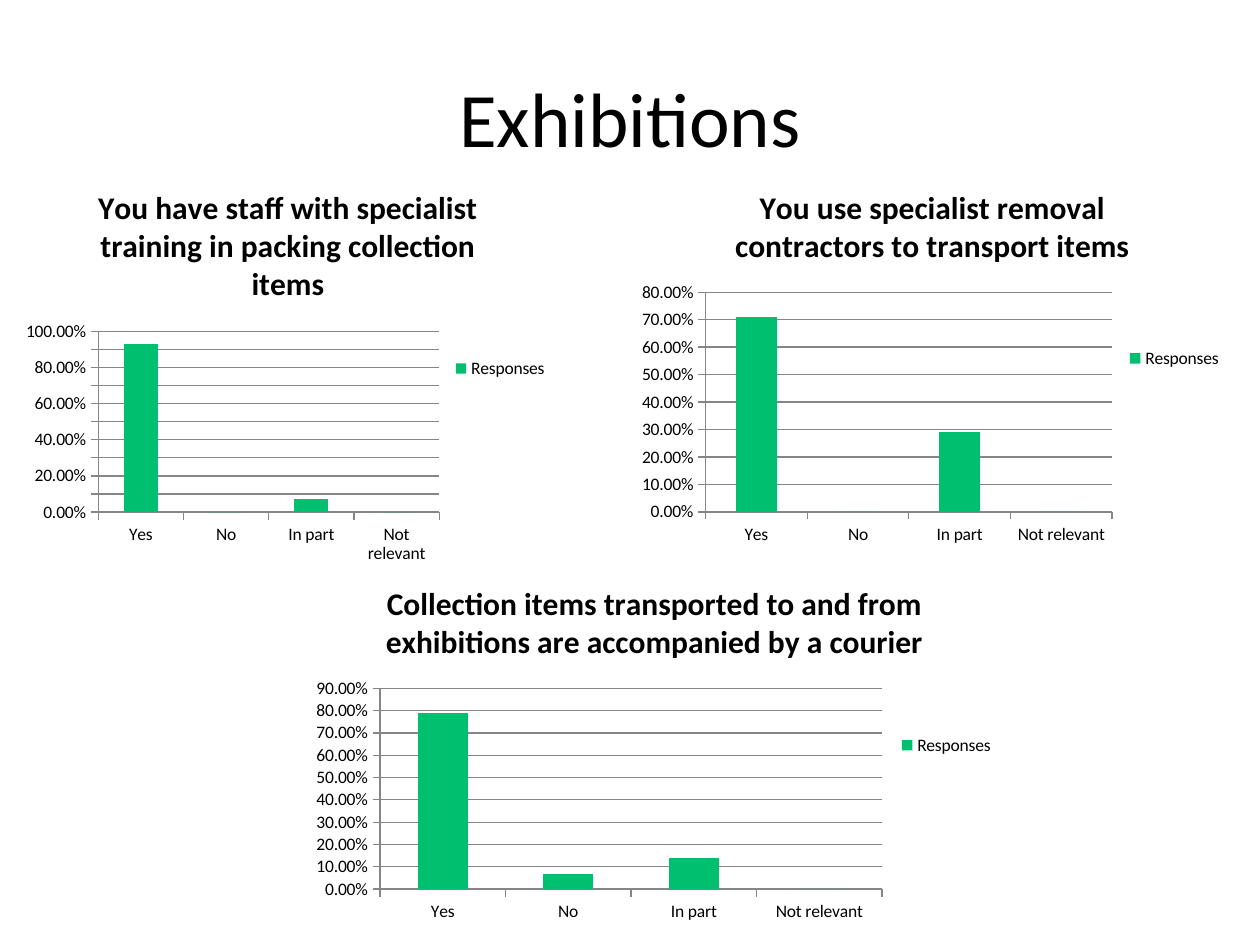
from typing import NamedTuple

from pptx import Presentation
from pptx import util as u
from pptx.chart.data import CategoryChartData
from pptx.dml.color import RGBColor
from pptx.enum import chart as charts, text

WIDTH, HEIGHT = u.Inches(10), u.Inches(7.5)
FONT = "Calibri"
BLACK, GREEN, GREY = "000000", "00BF6F", "868686"
ANSWERS = ("Yes", "No", "In part", "Not relevant")


class Area(NamedTuple):
    """Left, top, width and height as percentages of the slide's size."""
    left: float
    top: float
    width: float
    height: float

    def lengths(self) -> tuple[int, int, int, int]:
        return (int(WIDTH * self.left / 100), int(HEIGHT * self.top / 100),
                int(WIDTH * self.width / 100), int(HEIGHT * self.height / 100))


class Question(NamedTuple):
    wording: str
    area: Area
    shares: tuple[float, ...]


TITLE_AREA = Area(5, 4, 90, 16.67)
QUESTIONS = (
    Question("You have staff with specialist training in packing collection items",
             Area(1.2, 17.47, 43.3, 43.07), (0.93, 0, 0.07, 0)),
    Question("You use specialist removal contractors to transport items",
             Area(50, 17.47, 48, 40.93), (0.71, 0, 0.29, 0)),
    Question("Collection items transported to and from exhibitions are accompanied by a courier",
             Area(24, 59.47, 55.9, 38.8), (0.79, 0.07, 0.14, 0)),
)


def colour(value: str) -> RGBColor:
    return RGBColor.from_string(value)


def set_font(font, size: float, bold: bool = False) -> None:
    font.name, font.size, font.bold = FONT, u.Pt(size), bold
    font.color.rgb = colour(BLACK)


def set_line(line) -> None:
    line.color.rgb = colour(GREY)
    line.width = u.Pt(0.75)


def add_title(page, wording: str) -> None:
    title = page.shapes.title
    title.left, title.top, title.width, title.height = TITLE_AREA.lengths()
    title.text_frame.text = wording
    title.text_frame.vertical_anchor = text.MSO_ANCHOR.MIDDLE
    para = title.text_frame.paragraphs[0]
    para.alignment = text.PP_ALIGN.CENTER
    set_font(para.font, 44)


def add_question(page, question: Question) -> None:
    data = CategoryChartData(number_format="0.00%")
    data.categories = ANSWERS
    data.add_series("Responses", question.shares)
    chart = page.shapes.add_chart(
        charts.XL_CHART_TYPE.COLUMN_CLUSTERED, *question.area.lengths(), data).chart
    set_font(chart.font, 10)

    chart.has_title = True
    chart.chart_title.include_in_layout = False
    heading = chart.chart_title.text_frame
    heading.text = question.wording
    set_font(heading.paragraphs[0].font, 18, bold=True)

    chart.has_legend = True
    chart.legend.position = charts.XL_LEGEND_POSITION.RIGHT
    chart.legend.include_in_layout = False

    plot = chart.plots[0]
    plot.gap_width = 150
    plot.vary_by_categories = False
    bars = plot.series[0]
    bars.invert_if_negative = False
    bars.format.fill.solid()
    bars.format.fill.fore_color.rgb = colour(GREEN)

    for axis in (chart.category_axis, chart.value_axis):
        axis.major_tick_mark = charts.XL_TICK_MARK.OUTSIDE
        axis.minor_tick_mark = charts.XL_TICK_MARK.NONE
        set_line(axis.format.line)
    chart.value_axis.has_major_gridlines = True
    set_line(chart.value_axis.major_gridlines.format.line)
    labels = chart.value_axis.tick_labels
    labels.number_format = "0.00%"
    labels.number_format_is_linked = False


def main() -> None:
    deck = Presentation()
    deck.slide_width, deck.slide_height = WIDTH, HEIGHT
    page = deck.slides.add_slide(deck.slide_layouts.get_by_name("Title Only"))
    add_title(page, "Exhibitions")
    for question in QUESTIONS:
        add_question(page, question)
    deck.save("out.pptx")


if __name__ == "__main__":
    main()
